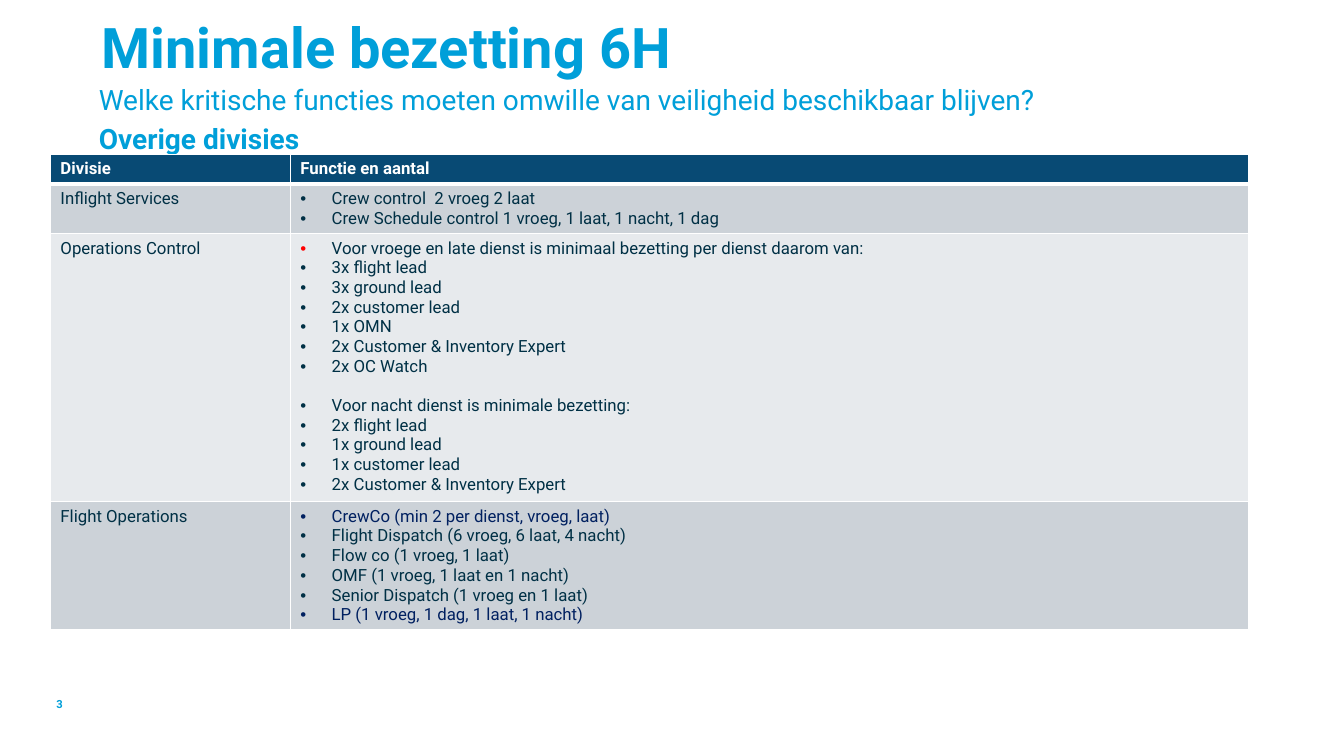
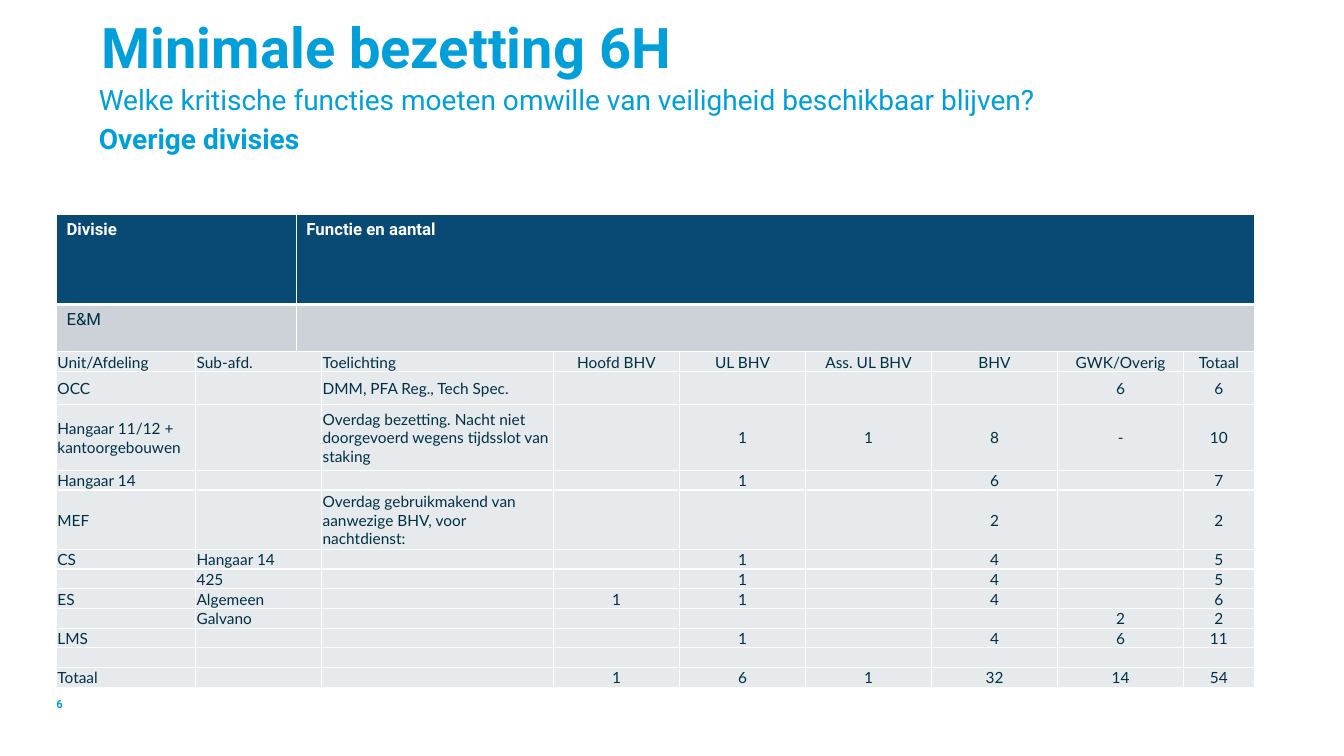
from dataclasses import dataclass

from lxml.etree import SubElement
from pptx import Presentation
from pptx.dml.color import RGBColor
from pptx.enum.text import MSO_ANCHOR, MSO_AUTO_SIZE, PP_ALIGN
from pptx.oxml import parse_xml
from pptx.oxml.ns import nsdecls, qn
from pptx.util import Inches, Pt


@dataclass(frozen=True)
class Theme:
    accent: str = "009FD9"
    header: str = "084A74"
    band: str = "CCD2D8"
    light: str = "E7EAED"
    white: str = "FFFFFF"
    ink: str = "003045"
    navy: str = "002060"
    red: str = "FF0000"
    font: str = "Roboto"
    staffing_font: str = "Lato"
    title_size: int = 40
    subtitle_size: int = 20
    table_size: int = 12
    staffing_size: int = 11
    number_size: int = 8


theme = Theme()


def set_font(paragraph, size, color, bold=False, name=theme.font):
    font = paragraph.font
    font.name, font.size, font.bold = name, Pt(size), bold
    font.color.rgb = RGBColor.from_string(color)


def add_grid(slide, left, top, widths, heights, fills, header=False):
    """Add a table with one fill per row and white cell borders."""
    table = slide.shapes.add_table(
        len(heights), len(widths), Inches(left), Inches(top),
        Inches(sum(widths)), Inches(sum(heights))).table
    table.first_row = header
    table.horz_banding = False
    for column, width in zip(table.columns, widths):
        column.width = Inches(width)
    for index, (row, height, fill) in enumerate(zip(table.rows, heights, fills)):
        row.height = Inches(height)
        for cell in row.cells:
            cell.fill.solid()
            cell.fill.fore_color.rgb = RGBColor.from_string(fill)
            for position, side in enumerate(("lnL", "lnR", "lnT", "lnB")):
                thick = header and (index, side) in ((0, "lnB"), (1, "lnT"))
                cell._tc.get_or_add_tcPr().insert(position, parse_xml(
                    f'<a:{side} {nsdecls("a")} w="{Pt(3 if thick else 1)}">'
                    f'<a:solidFill><a:srgbClr val="{theme.white}"/></a:solidFill>'
                    f'</a:{side}>'))
    return table


# Content: (text, text colour, bullet colour, space before) per bullet
def_look = (theme.ink, theme.ink, 0)
inflight = [(text, *def_look) for text in (
    "Crew control  2 vroeg 2 laat",
    "Crew Schedule control 1 vroeg, 1 laat, 1 nacht, 1 dag")]
operations = [
    ("Voor vroege en late dienst is minimaal bezetting per dienst daarom van:",
     theme.ink, theme.red, 0),
    *[(text, *def_look) for text in (
        "3x flight lead", "3x ground lead", "2x customer lead", "1x OMN",
        "2x Customer & Inventory Expert", "2x OC Watch")],
    ("Voor nacht dienst is minimale bezetting:", theme.ink, theme.ink, 14),
    *[(text, *def_look) for text in (
        "2x flight lead", "1x ground lead", "1x customer lead",
        "2x Customer & Inventory Expert")],
]
flight = [
    ("CrewCo (min 2 per dienst, vroeg, laat)", theme.navy, theme.navy, 0),
    *[(text, *def_look) for text in (
        "Flight Dispatch (6 vroeg, 6 laat, 4 nacht)", "Flow co (1 vroeg, 1 laat)",
        "OMF (1 vroeg, 1 laat en 1 nacht)", "Senior Dispatch (1 vroeg en 1 laat)")],
    ("LP (1 vroeg, 1 dag, 1 laat, 1 nacht)", theme.navy, theme.navy, 0),
]

# Per slide: number, table left and top, row heights, divisions
pages = [
    ("3", 0.5, 1.53, [0.29, 0.49, 2.66, 1.27],
     [("Inflight Services", inflight), ("Operations Control", operations),
      ("Flight Operations", flight)]),
    ("6", 0.56, 2.13, [0.89, 0.47], [("E&M", [])]),
]

staffing = [
    ["Unit/Afdeling", "Sub-afd.", "Toelichting", "Hoofd BHV", "UL BHV",
     "Ass. UL BHV", "BHV", "GWK/Overig", "Totaal"],
    ["OCC", "", "DMM, PFA Reg., Tech Spec.", "", "", "", "", "6", "6"],
    ["Hangaar 11/12 + kantoorgebouwen", "",
     "Overdag bezetting. Nacht niet doorgevoerd wegens tijdsslot van staking",
     "", "1", "1", "8", "-", "10"],
    ["Hangaar 14", "", "", "", "1", "", "6", "", "7"],
    ["MEF", "", "Overdag gebruikmakend van aanwezige BHV, voor nachtdienst:",
     "", "", "", "2", "", "2"],
    ["CS", "Hangaar 14", "", "", "1", "", "4", "", "5"],
    ["", "425", "", "", "1", "", "4", "", "5"],
    ["ES", "Algemeen", "", "1", "1", "", "4", "", "6"],
    ["", "Galvano", "", "", "", "", "", "2", "2"],
    ["LMS", "", "", "", "1", "", "4", "6", "11"],
    [""] * 9,
    ["Totaal", "", "", "1", "6", "1", "32", "14", "54"],
]

deck = Presentation()
deck.slide_width, deck.slide_height = Inches(13.33), Inches(7.5)

for number, left, top, heights, divisions in pages:
    slide = deck.slides.add_slide(deck.slide_layouts[5])

    # Title
    title = slide.shapes.title
    title.left, title.top = Inches(1.01), Inches(0.2)
    title.width, title.height = Inches(11.64), Inches(0.54)
    title.text_frame.text = "Minimale bezetting 6H"
    heading = title.text_frame.paragraphs[0]
    heading.alignment = PP_ALIGN.LEFT
    heading.line_spacing = 0.9
    set_font(heading, theme.title_size, theme.accent, bold=True)

    # Subtitle and slide number
    subtitle = slide.shapes.add_textbox(
        Inches(0.98), Inches(0.86), Inches(11.64), Inches(0.4))
    subtitle.text_frame.text = (
        "Welke kritische functies moeten omwille van veiligheid beschikbaar blijven?"
        "\nOverige divisies")
    for index, line in enumerate(subtitle.text_frame.paragraphs):
        line.line_spacing = 0.9
        line.space_after = Pt(6)
        set_font(line, theme.subtitle_size, theme.accent, bold=index == 1)

    page_number = slide.shapes.add_textbox(
        Inches(0.56), Inches(6.9), Inches(0.45), Inches(0.16))
    page_number.text_frame.text = number
    set_font(page_number.text_frame.paragraphs[0],
             theme.number_size, theme.accent, bold=True)

    for box, anchor in ((title, MSO_ANCHOR.TOP), (subtitle, MSO_ANCHOR.TOP),
                        (page_number, MSO_ANCHOR.MIDDLE)):
        frame = box.text_frame
        frame.word_wrap = True
        frame.auto_size = MSO_AUTO_SIZE.NONE
        frame.vertical_anchor = anchor
        frame.margin_left = frame.margin_right = 0
        frame.margin_top = frame.margin_bottom = 0

    # Division table
    fills = [theme.header, theme.band, theme.light, theme.band][:len(heights)]
    table = add_grid(slide, left, top, [2.38, 9.5], heights, fills, header=True)
    for column, label in enumerate(("Divisie", "Functie en aantal")):
        table.cell(0, column).text = label
        set_font(table.cell(0, column).text_frame.paragraphs[0],
                 theme.table_size, theme.white, bold=True)
    for row, (division, duties) in enumerate(divisions, start=1):
        table.cell(row, 0).text = division
        set_font(table.cell(row, 0).text_frame.paragraphs[0],
                 theme.table_size, theme.ink)
        duty_frame = table.cell(row, 1).text_frame
        duty_frame.text = "\n".join(duty[0] for duty in duties)
        for item, (_, color, bullet, gap) in zip(duty_frame.paragraphs, duties):
            props = item._p.get_or_add_pPr()
            props.set("marL", str(Inches(0.31)))
            props.set("indent", str(-Inches(0.31)))
            bullet_color = SubElement(props, qn("a:buClr"))
            SubElement(bullet_color, qn("a:srgbClr"), val=bullet)
            SubElement(props, qn("a:buFont"), typeface="Arial")
            SubElement(props, qn("a:buChar"), char="•")
            if gap:
                item.space_before = Pt(gap)
            set_font(item, theme.table_size, color)

# Staffing table on the last slide
staffing_heights = [0.19, 0.33, 0.65, 0.19, 0.59] + [0.19] * 7
staffing_table = add_grid(
    slide, 0.56, 3.49, [1.38, 1.25, 2.3] + [1.25] * 5 + [0.7],
    staffing_heights, [theme.light] * len(staffing))
for row, values in enumerate(staffing):
    for column, value in enumerate(values):
        cell = staffing_table.cell(row, column)
        cell.margin_left = cell.margin_right = cell.margin_top = Inches(0.01)
        cell.margin_bottom = 0
        cell.vertical_anchor = MSO_ANCHOR.MIDDLE
        cell.text = value
        entry = cell.text_frame.paragraphs[0]
        entry.alignment = PP_ALIGN.CENTER if column > 2 else PP_ALIGN.LEFT
        set_font(entry, theme.staffing_size, theme.ink, name=theme.staffing_font)
        if not value:
            # Keeps empty rows as low as the filled ones
            SubElement(entry._p, qn("a:endParaRPr"),
                       sz=str(theme.staffing_size * 100))

deck.save("out.pptx")
